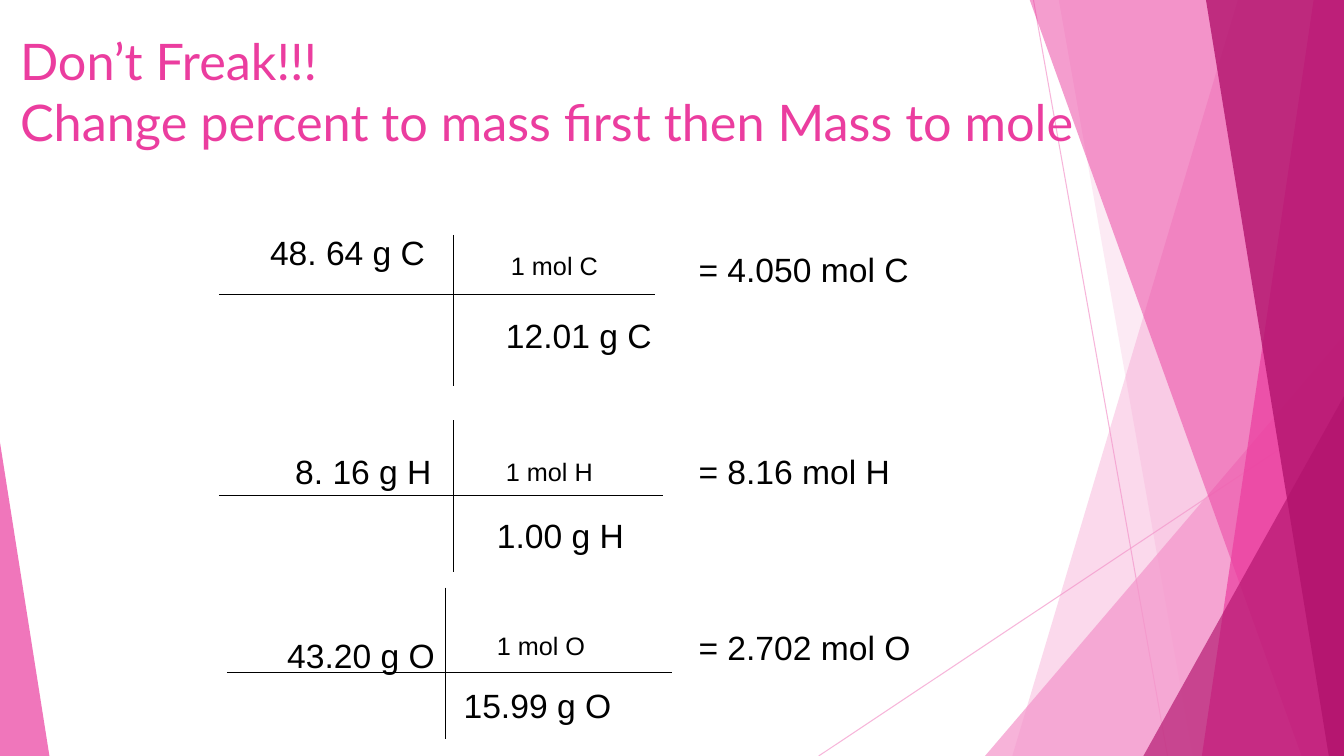
from pptx import Presentation
from pptx.dml.color import RGBColor
from pptx.enum.shapes import MSO_CONNECTOR, MSO_SHAPE
from pptx.enum.text import MSO_ANCHOR, MSO_AUTO_SIZE
from pptx.oxml.ns import qn
from pptx.util import Inches, Pt
from lxml.etree import SubElement

BLACK = RGBColor(0x00, 0x00, 0x00)
LIGHT = RGBColor(0xF4, 0x96, 0xCB)
PINK = RGBColor(0xEB, 0x3D, 0x9F)
DARK = RGBColor(0xB2, 0x13, 0x6D)
WIDTH, HEIGHT, TOP = 13.33, 7.5, -0.01

TITLE = "Don’t Freak!!!\vChange percent to mass first then Mass to mole"

CONVERSIONS = [
    {"bar": (2.17, 6.5, 2.92), "divider": (4.5, 2.33),
     "given": ("48. 64 g C", 2.58, 2.25, 1.83),
     "moles": ("1 mol C", 4.97, 2.43),
     "molar_mass": ("12.01 g C", 4.92, 3.08, 3.75),
     "result": ("= 4.050 mol C", 6.83, 2.42, 2.92)},
    {"bar": (2.17, 6.58, 4.92), "divider": (4.5, 4.17),
     "given": ("8. 16 g H", 2.83, 4.42, 3.67),
     "moles": ("1 mol H", 4.92, 4.48),
     "molar_mass": ("1.00 g H", 4.83, 5.06, 3.75),
     "result": ("= 8.16 mol H", 6.83, 4.42, 2.75)},
    {"bar": (2.25, 6.67, 6.67), "divider": (4.42, 5.83),
     "given": ("43.20 g O", 2.75, 6.25, 3.42),
     "moles": ("1 mol O", 4.83, 6.2),
     "molar_mass": ("15.99 g O", 4.5, 6.75, 4.25),
     "result": ("= 2.702 mol O", 6.83, 6.17, 3.33)},
]
DIVIDER_HEIGHT = 1.5

RAYS = [(10.25, 0, 11.58, HEIGHT), (WIDTH, 4.03, 8.12, HEIGHT)]
DECOR = [
    ("panel", (12.28, 10.04), LIGHT, 36),
    ("panel", (10.5, 11.83), LIGHT, 20),
    ("triangle", (9.77, 3.33, 3.56, 1), LIGHT, 72),
    ("panel", (10.21, 12.91), PINK, 50),
    ("panel", (13.03, 11.92), PINK, 70),
    ("panel", (11.96, 13.18), DARK, 80),
    ("triangle", (11.34, 3.93, 1.99, 1), DARK, 66),
    ("triangle", (0, 4.39, 0.49, 0), PINK, 70),
]

prs = Presentation()
prs.slide_width, prs.slide_height = Inches(WIDTH), Inches(HEIGHT)
s = prs.slides.add_slide(prs.slide_layouts[6])


def set_alpha(sp, percent):
    color = next(sp._element.spPr.iter(qn("a:srgbClr")))
    SubElement(color, qn("a:alpha"), val=str(percent * 1000))


def add_line(x1, y1, x2, y2, color=BLACK):
    c = s.shapes.add_connector(MSO_CONNECTOR.STRAIGHT, *map(Inches, (x1, y1, x2, y2)))
    c.line.color.rgb = color
    c.line.width = Pt(0.75)
    SubElement(c._element.spPr, qn("a:effectLst"))
    return c


def add_panel(top_x, bottom_x):
    corners = [(top_x, TOP), (WIDTH, TOP), (WIDTH, HEIGHT), (bottom_x, HEIGHT)]
    points = [(Inches(x), Inches(y)) for x, y in corners]
    builder = s.shapes.build_freeform(*points[0])
    builder.add_line_segments(points[1:], close=True)
    return builder.convert_to_shape()


def add_triangle(x, y, w, apex):
    sp = s.shapes.add_shape(MSO_SHAPE.ISOSCELES_TRIANGLE,
                            *map(Inches, (x, y, w, HEIGHT - y)))
    sp.adjustments[0] = apex
    return sp


def add_text(text, x, y, w, h=0.5, size=24, font="Arial", color=BLACK,
             fit=MSO_AUTO_SIZE.SHAPE_TO_FIT_TEXT):
    tf = s.shapes.add_textbox(*map(Inches, (x, y, w, h))).text_frame
    tf.word_wrap = True
    tf.auto_size = fit
    tf.vertical_anchor = MSO_ANCHOR.TOP
    p = tf.paragraphs[0]
    p.text = text
    for r in p.runs:
        r.font.name = font
        r.font.size = Pt(size)
        r.font.color.rgb = color


for ray in RAYS:
    set_alpha(add_line(*ray, color=LIGHT), 70)

for kind, geometry, color, alpha in DECOR:
    sp = add_panel(*geometry) if kind == "panel" else add_triangle(*geometry)
    sp.shadow.inherit = False
    sp.fill.solid()
    sp.fill.fore_color.rgb = color
    sp.line.fill.background()
    set_alpha(sp, alpha)

add_text(TITLE, 0.1, 0.25, 11.08, 1.44, size=36, font="Lato", color=PINK,
         fit=MSO_AUTO_SIZE.NONE)

for row in CONVERSIONS:
    left, right, y = row["bar"]
    add_line(left, y, right, y)
    x, top = row["divider"]
    add_line(x, top, x, top + DIVIDER_HEIGHT)
    for part in ("given", "molar_mass", "result"):
        add_text(*row[part])
    add_text(*row["moles"], w=1.33, h=0.4, size=18)

prs.save("out.pptx")
